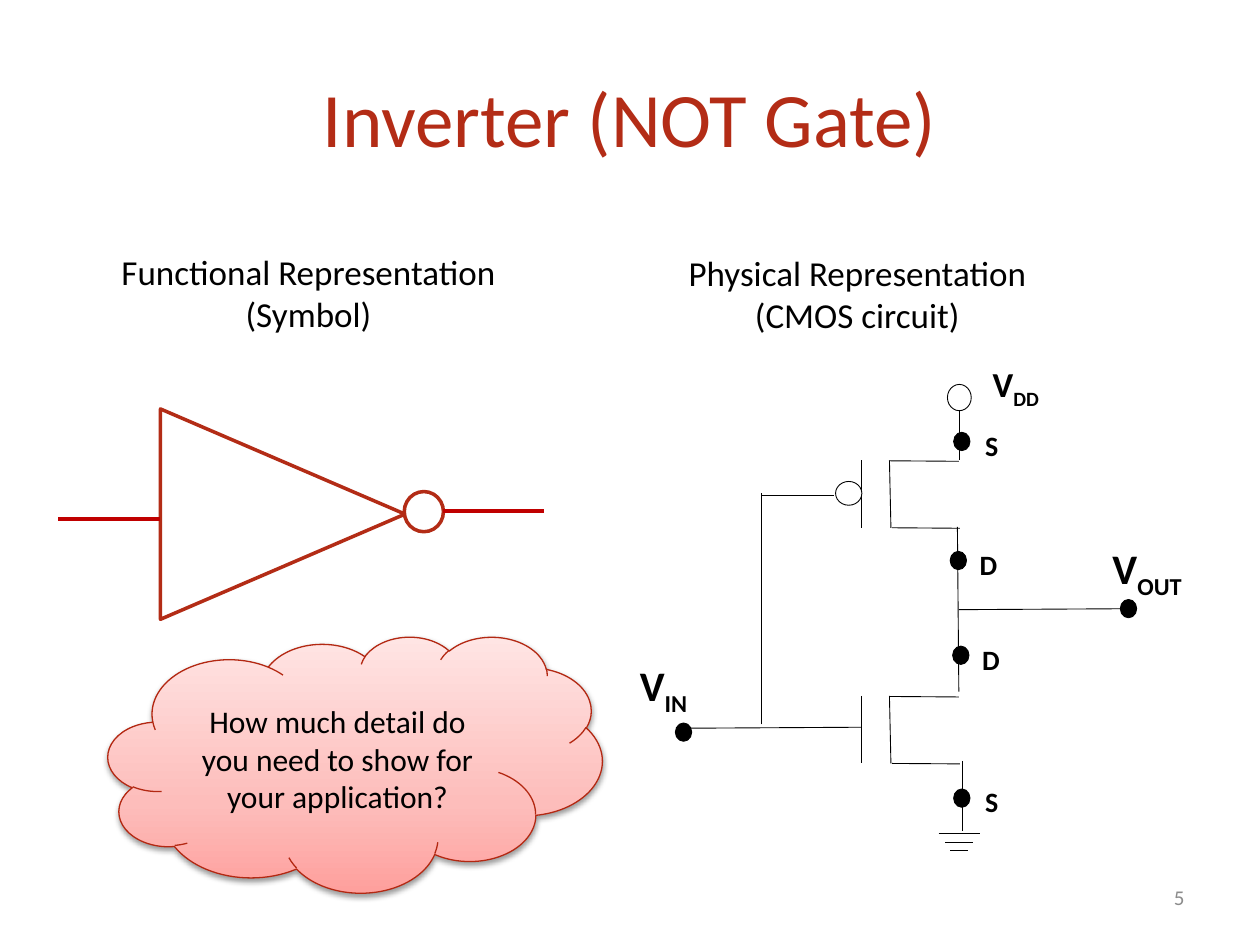
from lxml import etree
from pptx import Presentation
from pptx.dml.color import RGBColor
from pptx.enum.shapes import MSO_CONNECTOR as Connector, MSO_SHAPE as Shape
from pptx.enum.text import MSO_ANCHOR as Anchor, MSO_AUTO_SIZE as AutoSize, PP_ALIGN as Align
from pptx.oxml.ns import qn
from pptx.util import Cm, Pt

BLACK, WHITE, RED, WIRE_RED = "000000", "FFFFFF", "B32C16", "C00000"


def colour(value):
    return RGBColor.from_string(value)


def add_node(parent, tag, **attributes):
    return etree.SubElement(parent, qn(tag), attributes)


class Sketch:
    font = "Calibri"
    thin = 0.5

    def __init__(self, page):
        self.page = page
        self.shapes = page.shapes

    def start_group(self):
        self.shapes = self.page.shapes.add_group_shape().shapes

    def end_group(self):
        self.shapes = self.page.shapes

    def fill_frame(self, frame, paragraphs, size, shade=BLACK, bold=False, align=Align.CENTER):
        frame.word_wrap = True
        for index, pieces in enumerate(paragraphs):
            para = frame.add_paragraph() if index else frame.paragraphs[0]
            para.alignment = align
            for position, piece in enumerate(pieces):
                span = para.add_run()
                span.text = piece
                span.font.name = self.font
                span.font.size = Pt(size)
                span.font.bold = bold
                span.font.color.rgb = colour(shade)
                if position:
                    span._r.get_or_add_rPr().set("baseline", "-25000")

    def text(self, left, top, width, height, paragraphs, size, anchor=Anchor.TOP, **style):
        box = self.shapes.add_textbox(Cm(left), Cm(top), Cm(width), Cm(height))
        box.text_frame.vertical_anchor = anchor
        if anchor == Anchor.TOP:
            box.text_frame.auto_size = AutoSize.SHAPE_TO_FIT_TEXT
        self.fill_frame(box.text_frame, paragraphs, size, **style)

    def shape(self, kind, left, top, width, height, fill=WHITE, line=BLACK, weight=thin, rotation=0):
        item = self.shapes.add_shape(kind, Cm(left), Cm(top), Cm(width), Cm(height))
        item.rotation = rotation
        item.shadow.inherit = False
        item.fill.solid()
        item.fill.fore_color.rgb = colour(fill)
        item.line.color.rgb = colour(line)
        item.line.width = Pt(weight)
        return item

    def line(self, x1, y1, x2, y2, shade=BLACK, weight=thin):
        wire = self.shapes.add_connector(Connector.STRAIGHT, Cm(x1), Cm(y1), Cm(x2), Cm(y2))
        wire.line.color.rgb = colour(shade)
        wire.line.width = Pt(weight)
        add_node(wire._element.spPr, "a:effectLst")

    def dot(self, x, y, label=None):
        width, height = 0.33, 0.37
        self.shape(Shape.OVAL, x - width / 2, y - height / 2, width, height, fill=BLACK)
        if label:
            self.text(x - 0.46, y - 0.39, 2.13, 0.94, [[label]], 16, bold=True)

    def transistor(self, top):
        bottom = top + 1.36
        self.line(17.37, top, 17.37, bottom)
        self.line(17.93, top, 17.96, bottom)
        self.line(17.93, top + 0.01, 19.33, top + 0.02)
        self.line(17.98, bottom, 19.35, bottom + 0.01)

    def cloud(self, left, top, width, height, words):
        item = self.shape(Shape.CLOUD, left, top, width, height, line="B32812", weight=0.75)
        properties = item._element.spPr
        solid = properties.find(qn("a:solidFill"))
        gradient = etree.Element(qn("a:gradFill"), rotWithShape="1")
        stops = add_node(gradient, "a:gsLst")
        for place, shade in ((0, "FEA09D"), (35, "FDBDBB"), (100, "FFE5E4")):
            stop = add_node(stops, "a:gs", pos=str(place * 1000))
            add_node(stop, "a:srgbClr", val=shade)
        add_node(gradient, "a:lin", ang="16200000", scaled="0")
        properties.replace(solid, gradient)
        shadow = add_node(properties.find(qn("a:effectLst")), "a:outerShdw",
                          blurRad="40000", dist="20000", dir="5400000", rotWithShape="0")
        tint = add_node(shadow, "a:srgbClr", val=BLACK)
        add_node(tint, "a:alpha", val="38000")
        item.text_frame.vertical_anchor = Anchor.MIDDLE
        self.fill_frame(item.text_frame, [[words]], 18)


def draw_circuit(sketch):
    sketch.transistor(14.03)
    sketch.start_group()
    sketch.transistor(9.28)
    sketch.shape(Shape.OVAL, 16.87, 9.68, 0.48, 0.53, rotation=270)
    sketch.end_group()

    wires = [
        (17.37, 14.66, 13.84, 14.68), (19.41, 15.34, 19.41, 16.76),
        (16.81, 9.98, 15.37, 9.98), (15.34, 14.6, 15.34, 9.93),
        (19.33, 13.94, 19.3, 10.62), (19.35, 9.27, 19.35, 8.15),
        (22.89, 12.27, 19.33, 12.29),
    ]
    for wire in wires:
        sketch.line(*wire)

    terminals = [
        (19.39, 8.9, "S"), (19.32, 11.3, "D"), (19.37, 13.21, "D"),
        (19.39, 16.09, "S"), (22.75, 12.27, None), (13.78, 14.76, None),
    ]
    for terminal in terminals:
        sketch.dot(*terminal)

    sketch.start_group()
    for step, half in enumerate((0.42, 0.28, 0.18)):
        level = 16.81 + step * 0.17
        sketch.line(19.34 - half, level, 19.34 + half, level)
    sketch.end_group()

    sketch.shape(Shape.OVAL, 19.1, 7.75, 0.48, 0.53)
    sketch.text(19.76, 7.19, 1.73, 1.12, [["V", "DD"]], 20, bold=True, align=Align.LEFT)
    for left, top, suffix in ((21.69, 10.82, "OUT"), (11.94, 13.18, "IN")):
        sketch.text(left, top, 2.87, 1.27, [["V", suffix]], 24, bold=True)


def draw_symbol(sketch):
    sketch.shape(Shape.ISOSCELES_TRIANGLE, 3.58, 7.9, 4.24, 4.93, line=RED, weight=2, rotation=90)
    sketch.shape(Shape.OVAL, 8.15, 9.91, 0.79, 0.81, line=RED, weight=2)
    for start, end, level in ((1.17, 3.23, 10.46), (8.94, 10.97, 10.31)):
        sketch.line(start, level, end, level, shade=WIRE_RED, weight=2.25)


def main():
    deck = Presentation()
    deck.slide_width, deck.slide_height = Cm(25.4), Cm(19.05)
    sketch = Sketch(deck.slides.add_slide(deck.slide_layouts[6]))

    sketch.text(1.27, 0.76, 22.86, 3.18, [["Inverter (NOT Gate)"]], 44,
                anchor=Anchor.MIDDLE, shade=RED)
    sketch.text(18.21, 17.58, 5.92, 1.02, [["5"]], 12,
                anchor=Anchor.MIDDLE, shade="8C8C8C", align=Align.RIGHT)
    draw_circuit(sketch)
    draw_symbol(sketch)
    sketch.text(1.47, 4.93, 9.5, 1.96, [["Functional Representation"], ["(Symbol)"]], 20)
    sketch.text(13.08, 4.95, 8.41, 1.96, [["Physical Representation"], ["(CMOS circuit)"]], 20)
    sketch.cloud(2.18, 12.83, 9.96, 5.16,
                 "How much detail do you need to show for your application?")
    deck.save("out.pptx")


if __name__ == "__main__":
    main()
